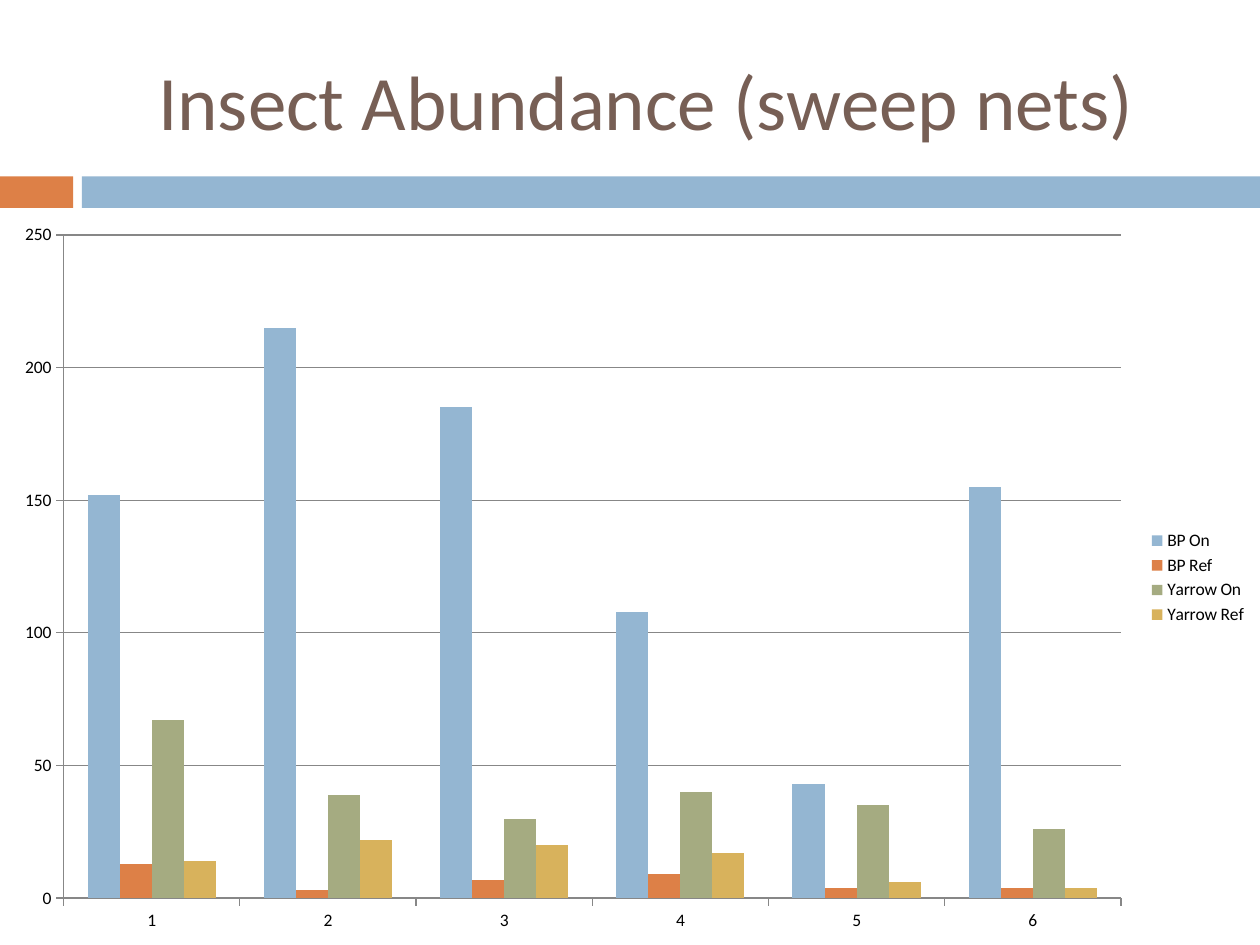
from dataclasses import dataclass

from pptx import Presentation
from pptx.chart.data import CategoryChartData
from pptx.dml.color import RGBColor
from pptx.enum.chart import XL_CHART_TYPE, XL_LEGEND_POSITION, XL_TICK_MARK
from pptx.enum.shapes import MSO_SHAPE
from pptx.enum.text import MSO_ANCHOR, PP_ALIGN
from pptx.util import Inches, Pt

RECT = MSO_SHAPE.RECTANGLE
COLUMN = XL_CHART_TYPE.COLUMN_CLUSTERED
RIGHT = XL_LEGEND_POSITION.RIGHT
OUT = XL_TICK_MARK.OUTSIDE
MIDDLE = MSO_ANCHOR.MIDDLE
CENTER = PP_ALIGN.CENTER


@dataclass(frozen=True)
class Theme:
    font: str = "Calibri"
    title: str = "775F55"
    text: str = "000000"
    line: str = "878787"
    blue: str = "94B6D2"
    orange: str = "DD8047"
    green: str = "A5AB81"
    gold: str = "D8B25C"
    title_size: int = 44
    chart_size: int = 10


THEME = Theme()
WEEKS = ["1", "2", "3", "4", "5", "6"]
COUNTS = [
    ("BP On", THEME.blue, (152, 215, 185, 108, 43, 155)),
    ("BP Ref", THEME.orange, (13, 3, 7, 9, 4, 4)),
    ("Yarrow On", THEME.green, (67, 39, 30, 40, 35, 26)),
    ("Yarrow Ref", THEME.gold, (14, 22, 20, 17, 6, 4)),
]


def place(*box):
    return [Inches(n) for n in box]


def paint(fill, color):
    fill.solid()
    fill.fore_color.rgb = RGBColor.from_string(color)


def style(font, size, color):
    font.name = THEME.font
    font.size = Pt(size)
    font.color.rgb = RGBColor.from_string(color)


def add_bar(slide, box, color):
    bar = slide.shapes.add_shape(RECT, *place(*box))
    bar.shadow.inherit = False
    paint(bar.fill, color)
    bar.line.fill.background()


def add_title(slide, box, text):
    frame = slide.shapes.add_textbox(*place(*box)).text_frame
    frame.word_wrap = True
    frame.vertical_anchor = MIDDLE
    para = frame.paragraphs[0]
    para.text = text
    para.alignment = CENTER
    style(para.font, THEME.title_size, THEME.title)


def draw_line(line):
    paint(line.fill, THEME.line)
    line.width = Pt(0.75)


def add_chart(slide, box):
    data = CategoryChartData()
    data.categories = WEEKS
    for name, _, counts in COUNTS:
        data.add_series(name, counts)
    chart = slide.shapes.add_chart(COLUMN, *place(*box), data).chart
    style(chart.font, THEME.chart_size, THEME.text)
    chart.has_title = False
    chart.has_legend = True
    chart.legend.position = RIGHT
    chart.legend.include_in_layout = False

    plot = chart.plots[0]
    plot.gap_width = 150
    plot.overlap = 0
    plot.vary_by_categories = False
    for series, (_, color, _) in zip(plot.series, COUNTS):
        paint(series.format.fill, color)
        series.invert_if_negative = False

    for axis in (chart.category_axis, chart.value_axis):
        axis.major_tick_mark = OUT
        draw_line(axis.format.line)
    scale = chart.value_axis
    scale.minimum_scale, scale.maximum_scale, scale.major_unit = 0, 250, 50
    scale.has_major_gridlines = True
    draw_line(scale.major_gridlines.format.line)


def main():
    deck = Presentation()
    deck.slide_width, deck.slide_height = place(10, 7.5)
    slide = deck.slides.add_slide(deck.slide_layouts[6])
    add_bar(slide, (0, 1.4, 0.58, 0.25), THEME.orange)
    add_bar(slide, (0.65, 1.4, 9.35, 0.25), THEME.blue)
    add_title(slide, (0.67, 0.25, 8.92, 1.08), "Insect Abundance (sweep nets)")
    add_chart(slide, (0, 1.67, 10, 5.83))
    deck.save("out.pptx")


if __name__ == "__main__":
    main()
